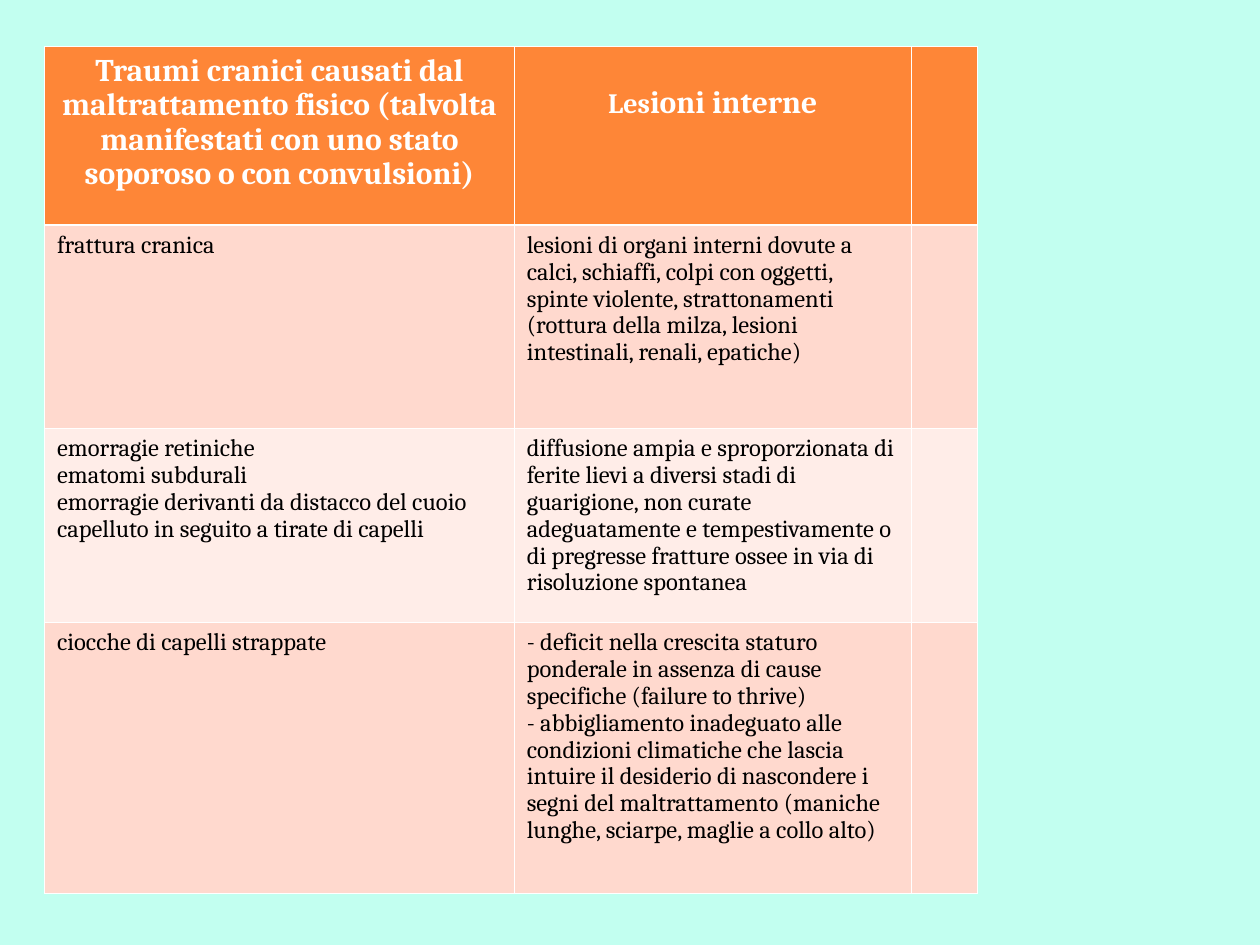
from lxml import etree
from pptx import Presentation
from pptx import util as u
from pptx.dml.color import RGBColor
from pptx.enum import text
from pptx.oxml.ns import qn

COLORS = {
    "background": "C2FFF0",
    "header": "FE8637",
    "odd": "FFD9CE",
    "even": "FFEDE8",
    "white": "FFFFFF",
    "black": "000000",
}
FONT = "Cambria"
THIN, THICK = 0.45, 1.47


def add_border(cell, position, side, width):
    line = etree.Element(qn(f"a:ln{side}"), w=str(u.Pt(width)))
    fill = etree.SubElement(line, qn("a:solidFill"))
    etree.SubElement(fill, qn("a:srgbClr"), val=COLORS["white"])
    cell._tc.get_or_add_tcPr().insert(position, line)


column_widths = [9.47, 8.0, 1.34]
row_heights = [3.6, 4.1, 3.91, 5.46]
header = [
    [[("Traumi cranici causati dal maltrattamento fisico (talvolta manifestati "
       "con uno stato soporoso o con convulsioni)", 18)]],
    [[("Les", 16), ("ioni interne", 18)]],
    [],
]
signs = [
    [
        ["frattura cranica"],
        ["lesioni di organi interni dovute a calci, schiaffi, colpi con oggetti, "
         "spinte violente, strattonamenti (rottura della milza, lesioni "
         "intestinali, renali, epatiche)"],
        [],
    ],
    [
        ["emorragie retiniche",
         "ematomi subdurali",
         "emorragie derivanti da distacco del cuoio capelluto in seguito a "
         "tirate di capelli"],
        ["diffusione ampia e sproporzionata di ferite lievi a diversi stadi di "
         "guarigione, non curate adeguatamente e tempestivamente o di pregresse "
         "fratture ossee in via di risoluzione spontanea"],
        [],
    ],
    [
        ["ciocche di capelli strappate"],
        ["- deficit nella crescita staturo ponderale in assenza di cause "
         "specifiche (failure to thrive)",
         "- abbigliamento inadeguato alle condizioni climatiche che lascia "
         "intuire il desiderio di nascondere i segni del maltrattamento (maniche "
         "lunghe, sciarpe, maglie a collo alto)"],
        [],
    ],
]
rows = [header] + [
    [[[(line, 14)] for line in lines] for lines in row] for row in signs
]

prs = Presentation()
prs.slide_width, prs.slide_height = u.Cm(25.4), u.Cm(19.05)
slide = prs.slides.add_slide(prs.slide_layouts[6])
slide.background.fill.solid()
slide.background.fill.fore_color.rgb = RGBColor.from_string(COLORS["background"])

injuries = slide.shapes.add_table(
    len(rows), len(column_widths), u.Cm(0.9), u.Cm(0.93),
    u.Cm(sum(column_widths)), u.Cm(sum(row_heights)),
).table
for column, width in zip(injuries.columns, column_widths):
    column.width = u.Cm(width)
for row, height in zip(injuries.rows, row_heights):
    row.height = u.Cm(height)

for r, row in enumerate(rows):
    is_header = r == 0
    band = "header" if is_header else "odd" if r % 2 else "even"
    ink = COLORS["white" if is_header else "black"]
    borders = {
        "L": THIN,
        "R": THIN,
        "T": THICK if r == 1 else THIN,
        "B": THICK if is_header else THIN,
    }
    for c, lines in enumerate(row):
        cell = injuries.cell(r, c)
        cell.fill.solid()
        cell.fill.fore_color.rgb = RGBColor.from_string(COLORS[band])
        cell.margin_left = cell.margin_right = u.Cm(0.25)
        cell.margin_top = u.Cm(0.8 if is_header and c == 1 else 0.15)
        cell.margin_bottom = u.Cm(0.13)
        for position, (side, width) in enumerate(borders.items()):
            add_border(cell, position, side, width)

        paragraph = cell.text_frame.paragraphs[0]
        paragraph.line_spacing = 0.95
        paragraph.alignment = text.PP_ALIGN.CENTER if is_header else text.PP_ALIGN.LEFT
        for n, line in enumerate(lines):
            if n:
                paragraph.add_line_break()
            for words, size in line:
                run = paragraph.add_run()
                run.text = words
                run.font.name = FONT
                run.font.size = u.Pt(size)
                run.font.bold = is_header
                run.font.color.rgb = RGBColor.from_string(ink)

prs.save("out.pptx")
